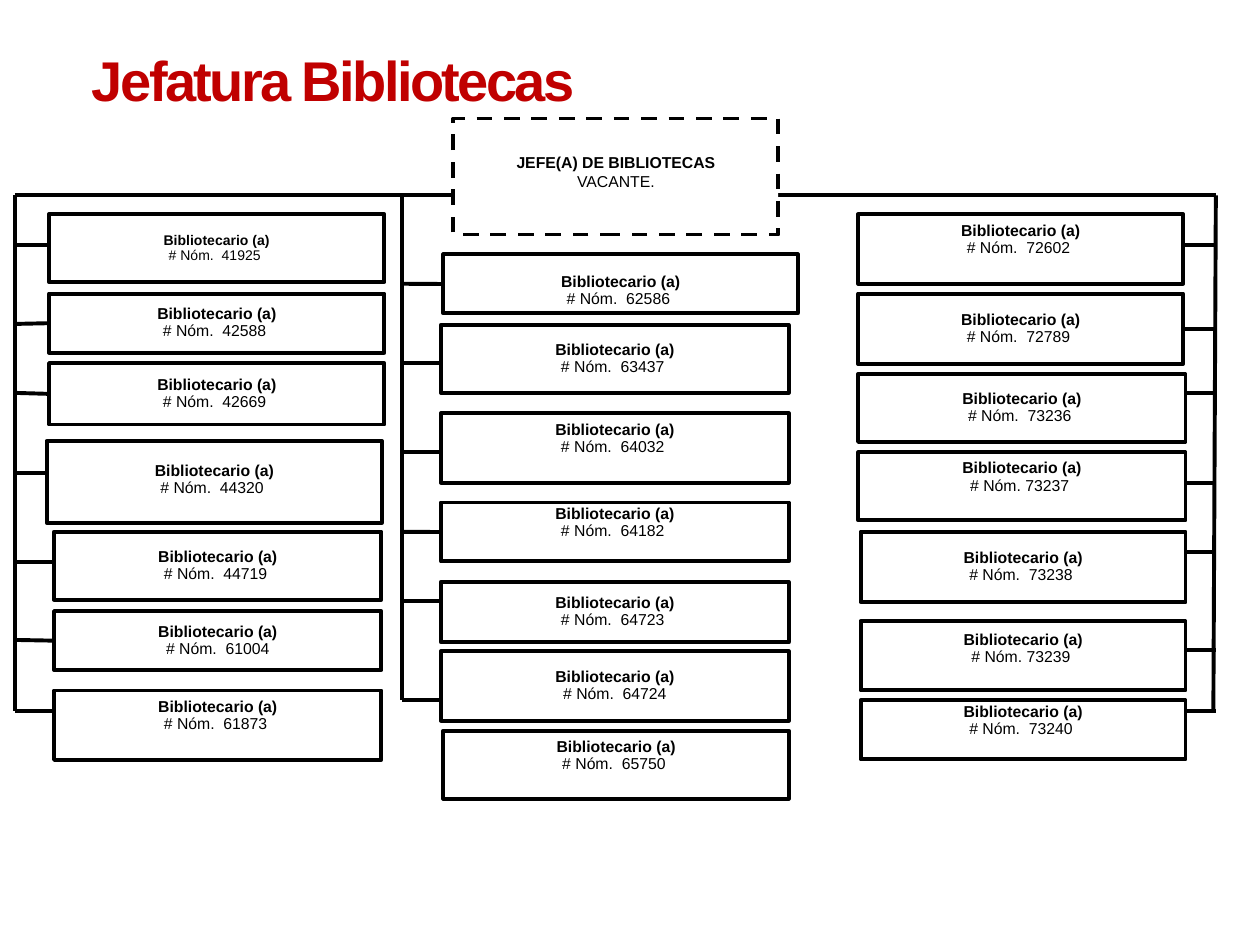
from typing import NamedTuple, Optional

from lxml.etree import SubElement
from pptx import Presentation
from pptx.dml.color import RGBColor
from pptx.enum.dml import MSO_LINE_DASH_STYLE as Dash
from pptx.enum.shapes import MSO_CONNECTOR as Connector, MSO_SHAPE as Shape
from pptx.enum.text import MSO_ANCHOR as Anchor, MSO_AUTO_SIZE as AutoSize, PP_ALIGN as Align
from pptx.oxml.ns import qn
from pptx.util import Cm, Pt

COLORS = {"ink": "000000", "paper": "FFFFFF", "title": "C00000"}
FONT = "Arial"
ROLE = "Bibliotecario (a)"
BUS_Y = 3.94
UP = -0.18
GLUE_TOLERANCE = 0.05
LEFT_SIDE, RIGHT_SIDE = 1, 3


class Post(NamedTuple):
    number: str
    left: float
    top: float
    width: float
    height: float
    branch_y: Optional[float]
    text_shift: float = 0
    size: int = 9


class Branch(NamedTuple):
    trunk_x: float
    trunk_end: tuple
    side: int
    posts: list


BRANCHES = [
    Branch(0.3, (0.3, 14.33), LEFT_SIDE, [
        Post("# Nóm.  41925 ", 0.99, 4.32, 6.76, 1.37, 4.93, size=8),
        Post("# Nóm.  42588 ", 0.99, 5.92, 6.76, 1.19, 6.53),
        Post("# Nóm.  42669 ", 0.99, 7.32, 6.76, 1.24, 7.92),
        Post("# Nóm.  44320 ", 0.94, 8.89, 6.76, 1.65, 9.53, -0.04),
        Post("# Nóm.  44719 ", 1.09, 10.72, 6.6, 1.37, 11.33),
        Post("# Nóm.  61004", 1.09, 12.32, 6.6, 1.19, 12.9),
        Post("# Nóm.  61873 ", 1.09, 13.92, 6.6, 1.4, 14.33, UP),
    ]),
    Branch(8.1, (8.1, 14.12), LEFT_SIDE, [
        Post("# Nóm.  62586 ", 8.94, 5.13, 7.14, 1.19, 5.72, 0.14),
        Post("# Nóm.  63437 ", 8.89, 6.55, 7.01, 1.37, 7.32),
        Post("# Nóm.  64032 ", 8.89, 8.33, 7.01, 1.4, 9.12, UP),
        Post("# Nóm.  64182 ", 8.89, 10.13, 7.01, 1.19, 10.72, UP),
        Post("# Nóm.  64723 ", 8.89, 11.73, 7.01, 1.22, 12.12),
        Post("# Nóm.  64724", 8.89, 13.13, 7.01, 1.4, 14.12),
        Post("# Nóm.  65750 ", 8.94, 14.73, 6.96, 1.37, None, UP),
    ]),
    Branch(24.51, (24.46, 14.3), RIGHT_SIDE, [
        Post("# Nóm.  72602 ", 17.3, 4.32, 6.55, 1.4, 4.93, UP),
        Post("# Nóm.  72789 ", 17.3, 5.92, 6.55, 1.42, 6.63),
        Post("# Nóm.  73236 ", 17.3, 7.54, 6.6, 1.37, 7.92),
        Post("# Nóm. 73237 ", 17.3, 9.12, 6.6, 1.37, 9.73, UP),
        Post("# Nóm.  73238 ", 17.35, 10.72, 6.55, 1.42, 11.13),
        Post("# Nóm. 73239 ", 17.35, 12.52, 6.55, 1.4, 13.11, -0.14),
        Post("# Nóm.  73240 ", 17.35, 14.12, 6.55, 1.19, 14.33, UP),
    ]),
]


def color(name):
    return RGBColor.from_string(COLORS[name])


def format_paragraph(paragraph, size, bold, ink="ink"):
    paragraph.font.name = FONT
    paragraph.font.size = Pt(size)
    paragraph.font.bold = bold
    paragraph.font.color.rgb = color(ink)


def add_title(slide, text):
    title = slide.shapes.title
    title.left, title.top, title.width, title.height = Cm(1.6), Cm(0.79), Cm(13.28), Cm(5.74)
    frame = title.text_frame
    frame.auto_size = AutoSize.NONE
    frame.vertical_anchor = Anchor.TOP
    frame.text = text
    heading = frame.paragraphs[0]
    heading.alignment = Align.LEFT
    format_paragraph(heading, 32, True, "title")
    heading.runs[0]._r.get_or_add_rPr().set("spc", "-150")


def add_line(slide, start, end):
    line = slide.shapes.add_connector(Connector.STRAIGHT, *map(Cm, start + end))
    line.line.color.rgb = color("ink")
    line.line.width = Pt(2.25)
    SubElement(line._element.spPr, qn("a:effectLst"))
    return line


def add_box(slide, bounds, role, detail, size=9, text_shift=0.0, spacing=0.9):
    box = slide.shapes.add_shape(Shape.RECTANGLE, *map(Cm, bounds))
    box.shadow.inherit = False
    box.fill.solid()
    box.fill.fore_color.rgb = color("paper")
    box.line.color.rgb = color("ink")
    box.line.width = Pt(2.25)
    frame = box.text_frame
    frame.word_wrap = False
    frame.vertical_anchor = Anchor.MIDDLE
    frame.margin_top = Cm(max(0, 2 * text_shift))
    frame.margin_bottom = Cm(max(0, -2 * text_shift))
    frame.text = f"{role}\n{detail}"
    for paragraph, bold in zip(frame.paragraphs, (True, False)):
        paragraph.alignment = Align.CENTER
        paragraph.line_spacing = spacing
        format_paragraph(paragraph, size, bold)
    return box


def add_post(slide, post, trunk_x, side):
    bounds = (post.left, post.top, post.width, post.height)
    box = add_box(slide, bounds, ROLE, post.number, post.size, post.text_shift)
    if post.branch_y is None:
        return
    edge_x = post.left if side == LEFT_SIDE else post.left + post.width
    link = add_line(slide, (trunk_x, post.branch_y), (edge_x, post.branch_y))
    if abs(post.top + post.height / 2 - post.branch_y) < GLUE_TOLERANCE:
        link.end_connect(box, side)


def main():
    presentation = Presentation()
    presentation.slide_width, presentation.slide_height = Cm(25.4), Cm(19.05)
    slide = presentation.slides.add_slide(presentation.slide_layouts[5])
    add_title(slide, "Jefatura Bibliotecas")
    add_line(slide, (BRANCHES[0].trunk_x, BUS_Y), (BRANCHES[-1].trunk_x, BUS_Y))
    head = add_box(slide, (9.14, 2.39, 6.55, 2.34), "JEFE(A) DE BIBLIOTECAS",
                   "VACANTE.", text_shift=-0.1, spacing=1.0)
    head.line.dash_style = Dash.DASH
    for branch in BRANCHES:
        add_line(slide, (branch.trunk_x, BUS_Y), branch.trunk_end)
        for post in branch.posts:
            add_post(slide, post, branch.trunk_x, branch.side)
    presentation.save("out.pptx")


if __name__ == "__main__":
    main()
